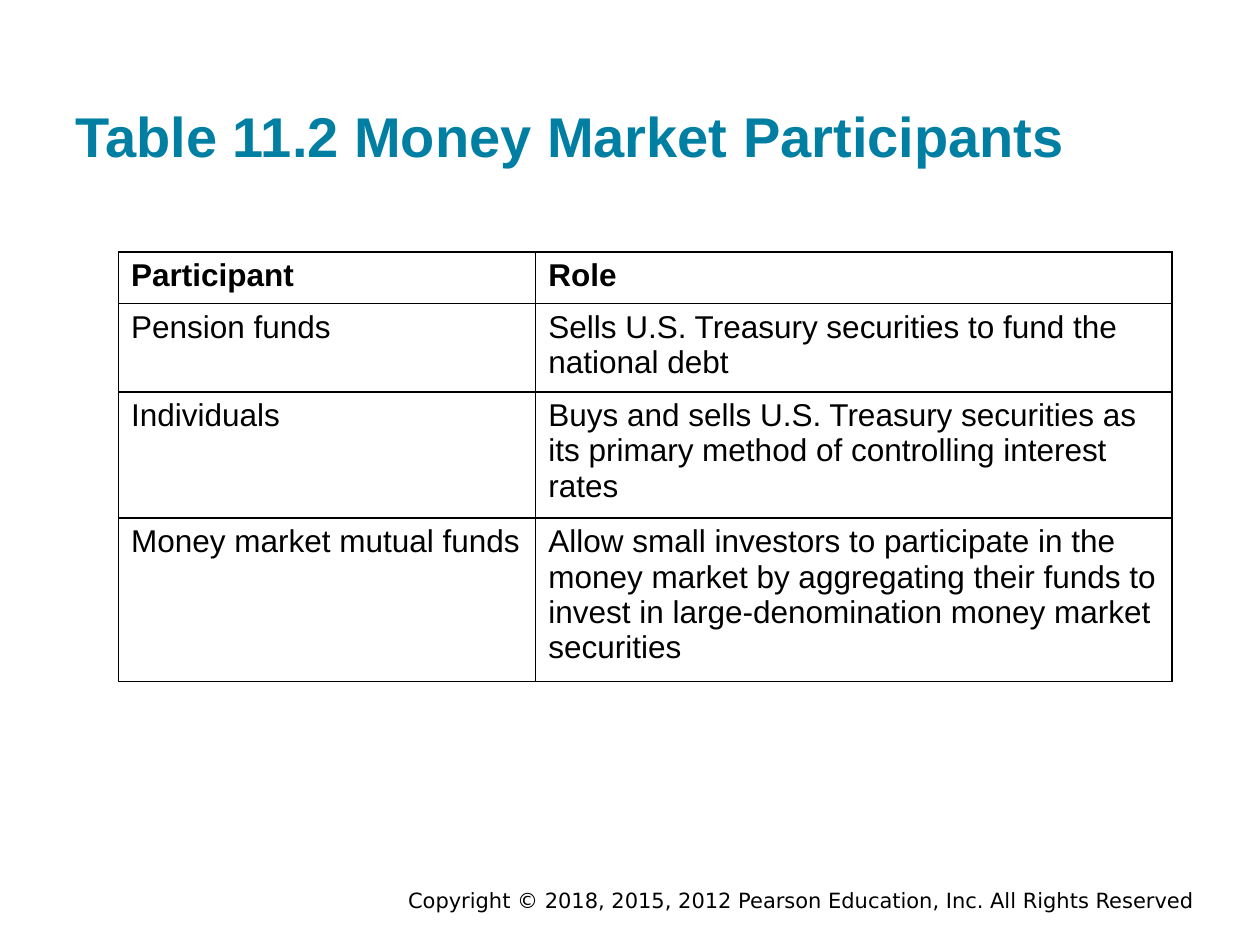
from lxml.etree import SubElement
from pptx import Presentation
from pptx.dml.color import RGBColor
from pptx.enum.text import MSO_ANCHOR, PP_ALIGN
from pptx.oxml.ns import qn
from pptx.util import Cm, Pt

TEAL = RGBColor(0x00, 0x7F, 0xA3)
BLACK = RGBColor(0x00, 0x00, 0x00)
WHITE = RGBColor(0xFF, 0xFF, 0xFF)

PARTICIPANTS = [
    ("Participant", "Role"),
    ("Pension funds", "Sells U.S. Treasury securities to fund the national debt"),
    ("Individuals", "Buys and sells U.S. Treasury securities as its primary "
                    "method of controlling interest rates"),
    ("Money market mutual funds",
     "Allow small investors to participate in the money market by aggregating "
     "their funds to invest in large-denomination money market securities"),
]


class SlideBuilder:
    font_name = "Arial"
    footer_font = "DejaVu Sans"
    border_width = Pt(1)

    def __init__(self, page):
        self.page = page

    def add_run(self, para, text, size, color=BLACK, bold=False, font_name=None):
        span = para.add_run()
        span.text = text
        span.font.name = font_name or self.font_name
        span.font.size = Pt(size)
        span.font.bold = bold
        span.font.color.rgb = color

    def add_text_box(self, left, top, width, height, anchor, padding):
        """Add a wrapping box with the given vertical padding; return its paragraph."""
        box = self.page.shapes.add_textbox(Cm(left), Cm(top), Cm(width), Cm(height))
        frame = box.text_frame
        frame.word_wrap = True
        frame.vertical_anchor = anchor
        frame.margin_top = frame.margin_bottom = Cm(padding)
        return frame.paragraphs[0]

    def add_title(self, text):
        para = self.add_text_box(1.27, 0.61, 23.47, 3.05, MSO_ANCHOR.BOTTOM, 0.25)
        self.add_run(para, text, 32, TEAL, bold=True)

    def add_footer(self, text):
        para = self.add_text_box(4.44, 17.86, 19.89, 0.56, MSO_ANCHOR.MIDDLE, 0.13)
        para.alignment = PP_ALIGN.RIGHT
        self.add_run(para, text, 12, font_name=self.footer_font)

    def add_borders(self, cell):
        properties = cell._tc.get_or_add_tcPr()
        for side in ("a:lnL", "a:lnR", "a:lnT", "a:lnB"):
            line = SubElement(properties, qn(side), w=str(self.border_width))
            fill = SubElement(line, qn("a:solidFill"))
            SubElement(fill, qn("a:srgbClr"), val=str(BLACK))

    def add_table(self, rows, left, top, column_widths, row_height):
        """Add a bordered table whose first row is bold."""
        frame = self.page.shapes.add_table(
            len(rows), len(column_widths), Cm(left), Cm(top),
            Cm(sum(column_widths)), Cm(row_height * len(rows)))
        table = frame.table
        for column, width in zip(table.columns, column_widths):
            column.width = Cm(width)
        for row_index, texts in enumerate(rows):
            table.rows[row_index].height = Cm(row_height)
            for column_index, text in enumerate(texts):
                cell = table.cell(row_index, column_index)
                self.add_borders(cell)
                cell.fill.solid()
                cell.fill.fore_color.rgb = WHITE
                para = cell.text_frame.paragraphs[0]
                self.add_run(para, text, 18, bold=row_index == 0)


def main():
    deck = Presentation()
    deck.slide_width, deck.slide_height = Cm(25.4), Cm(19.05)
    builder = SlideBuilder(deck.slides.add_slide(deck.slide_layouts[6]))
    builder.add_footer(
        "Copyright © 2018, 2015, 2012 Pearson Education, Inc. All Rights Reserved")
    builder.add_title("Table 11.2 Money Market Participants")
    builder.add_table(PARTICIPANTS, 2.39, 5.08, (8.41, 12.83), 1.04)
    deck.save("out.pptx")


if __name__ == "__main__":
    main()
